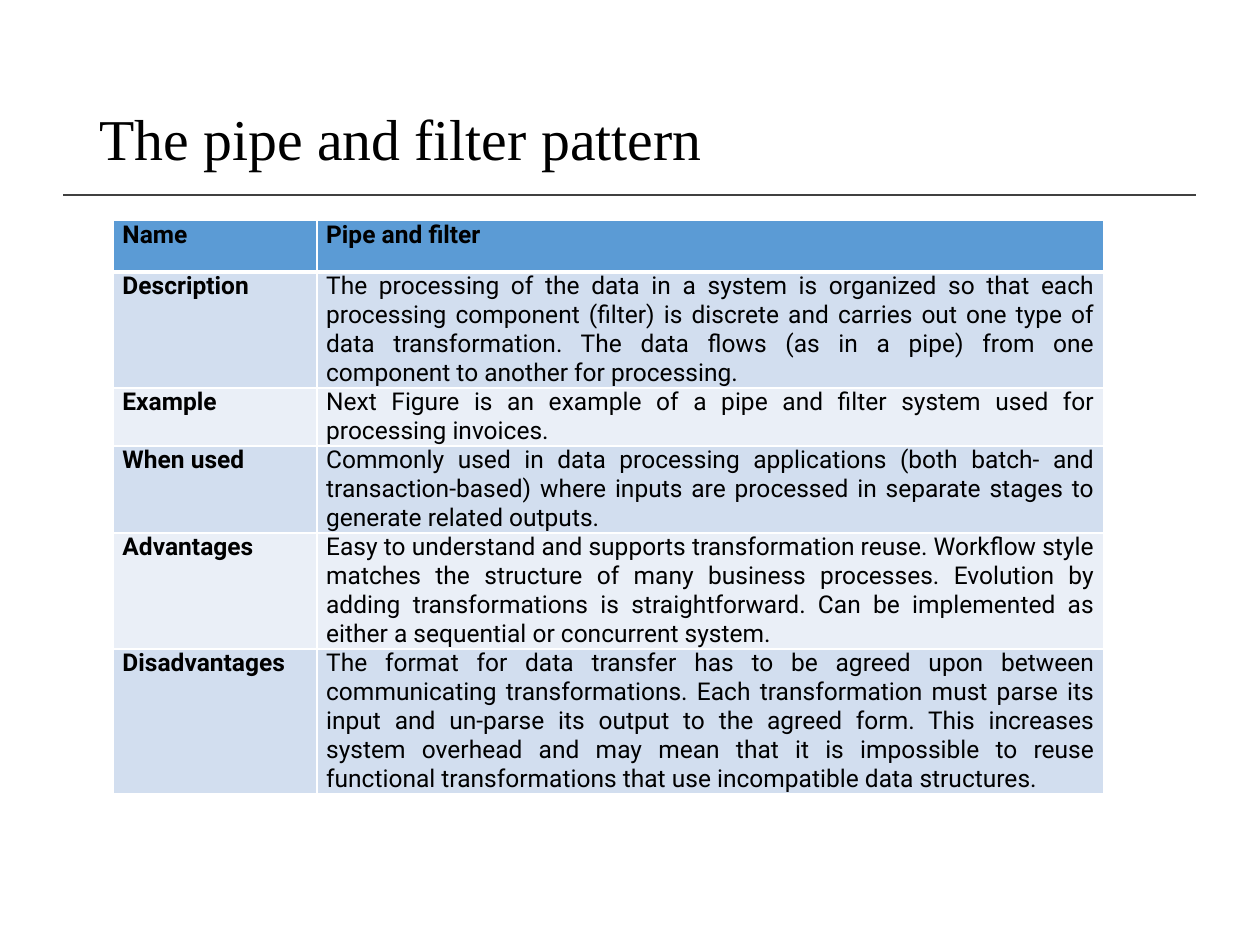
"""Build the slide that describes the pipe and filter pattern in a table."""
from pptx import Presentation
from pptx.dml.color import RGBColor
from pptx.enum.shapes import MSO_CONNECTOR as Connector
from pptx.enum.text import MSO_ANCHOR as Anchor, PP_ALIGN as Align
from pptx.oxml.ns import qn
from pptx.util import Pt
from lxml.etree import SubElement

COLORS = {
    "text": "000000",
    "rule": "404040",
    "border": "FFFFFF",
    "header": "5B9BD5",
    "odd": "D2DEEF",
    "even": "EAEFF7",
}
LINE_HEIGHT = 16.5
HEADER_HEIGHT = 29.5
PATTERN = [
    ("Name", "Pipe and filter", 1),
    ("Description",
     "The processing of the data in a system is organized so that each "
     "processing component (filter) is discrete and carries out one type of "
     "data transformation. The data flows (as in a pipe) from one component "
     "to another for processing.", 4),
    ("Example",
     "Next Figure is an example of a pipe and filter system used for "
     "processing invoices.", 2),
    ("When used",
     "Commonly used in data processing applications (both batch- and "
     "transaction-based) where inputs are processed in separate stages to "
     "generate related outputs.", 3),
    ("Advantages",
     "Easy to understand and supports transformation reuse. Workflow style "
     "matches the structure of many business processes. Evolution by adding "
     "transformations is straightforward. Can be implemented as either a "
     "sequential or concurrent system.", 4),
    ("Disadvantages",
     "The format for data transfer has to be agreed upon between "
     "communicating transformations. Each transformation must parse its "
     "input and un-parse its output to the agreed form. This increases "
     "system overhead and may mean that it is impossible to reuse functional "
     "transformations that use incompatible data structures.", 5),
]


def color(name):
    return RGBColor.from_string(COLORS[name])


def format_text(paragraph, face, size, bold=False):
    for run in paragraph.runs:
        run.font.name = face
        run.font.size = Pt(size)
        run.font.bold = bold
        run.font.color.rgb = color("text")


def add_title(slide, wording):
    title = slide.shapes.title
    title.left, title.top = Pt(49.5), Pt(28.75)
    title.width, title.height = Pt(621), Pt(104.4)
    title.text_frame.text = wording
    title.text_frame.vertical_anchor = Anchor.MIDDLE
    heading = title.text_frame.paragraphs[0]
    heading.alignment = Align.LEFT
    heading.line_spacing = 0.9
    format_text(heading, "Times New Roman", 33)


def add_rule(slide, left, right, y):
    rule = slide.shapes.add_connector(
        Connector.STRAIGHT, Pt(left), Pt(y), Pt(right), Pt(y))
    rule.line.color.rgb = color("rule")
    rule.line.width = Pt(1)
    SubElement(rule._element.spPr, qn("a:effectLst"))


def set_borders(cell, bottom_width):
    properties = cell._tc.get_or_add_tcPr()
    for side, width in (("L", 1), ("R", 1), ("T", 1), ("B", bottom_width)):
        border = SubElement(properties, qn(f"a:ln{side}"), w=str(Pt(width)))
        fill = SubElement(border, qn("a:solidFill"))
        SubElement(fill, qn("a:srgbClr"), val=COLORS["border"])


def fill_cell(cell, wording, band, bold):
    set_borders(cell, 3 if band == "header" else 1)
    cell.fill.solid()
    cell.fill.fore_color.rgb = color(band)
    cell.margin_left = cell.margin_right = Pt(5.2)
    cell.margin_top = cell.margin_bottom = 0
    cell.text_frame.text = wording
    entry = cell.text_frame.paragraphs[0]
    entry.alignment = Align.JUSTIFY
    format_text(entry, "Roboto", 14, bold)


def add_pattern_table(slide, left, top, widths):
    table = slide.shapes.add_table(
        len(PATTERN), len(widths), Pt(left), Pt(top),
        Pt(sum(widths)), Pt(HEADER_HEIGHT * len(PATTERN))).table
    for column, width in zip(table.columns, widths):
        column.width = Pt(width)
    for index, (aspect, details, line_count) in enumerate(PATTERN):
        is_header = index == 0
        band = "header" if is_header else ("even", "odd")[index % 2]
        table.rows[index].height = Pt(
            HEADER_HEIGHT if is_header else line_count * LINE_HEIGHT)
        fill_cell(table.cell(index, 0), aspect, band, True)
        fill_cell(table.cell(index, 1), details, band, is_header)


def main():
    deck = Presentation()
    deck.slide_width, deck.slide_height = Pt(720), Pt(540)
    slide = deck.slides.add_slide(deck.slide_layouts.get_by_name("Title Only"))
    add_rule(slide, 36, 683.3, 111.6)
    add_title(slide, "The pipe and filter pattern")
    add_pattern_table(slide, 64.8, 126, (116.4, 449.6))
    deck.save("out.pptx")


if __name__ == "__main__":
    main()
